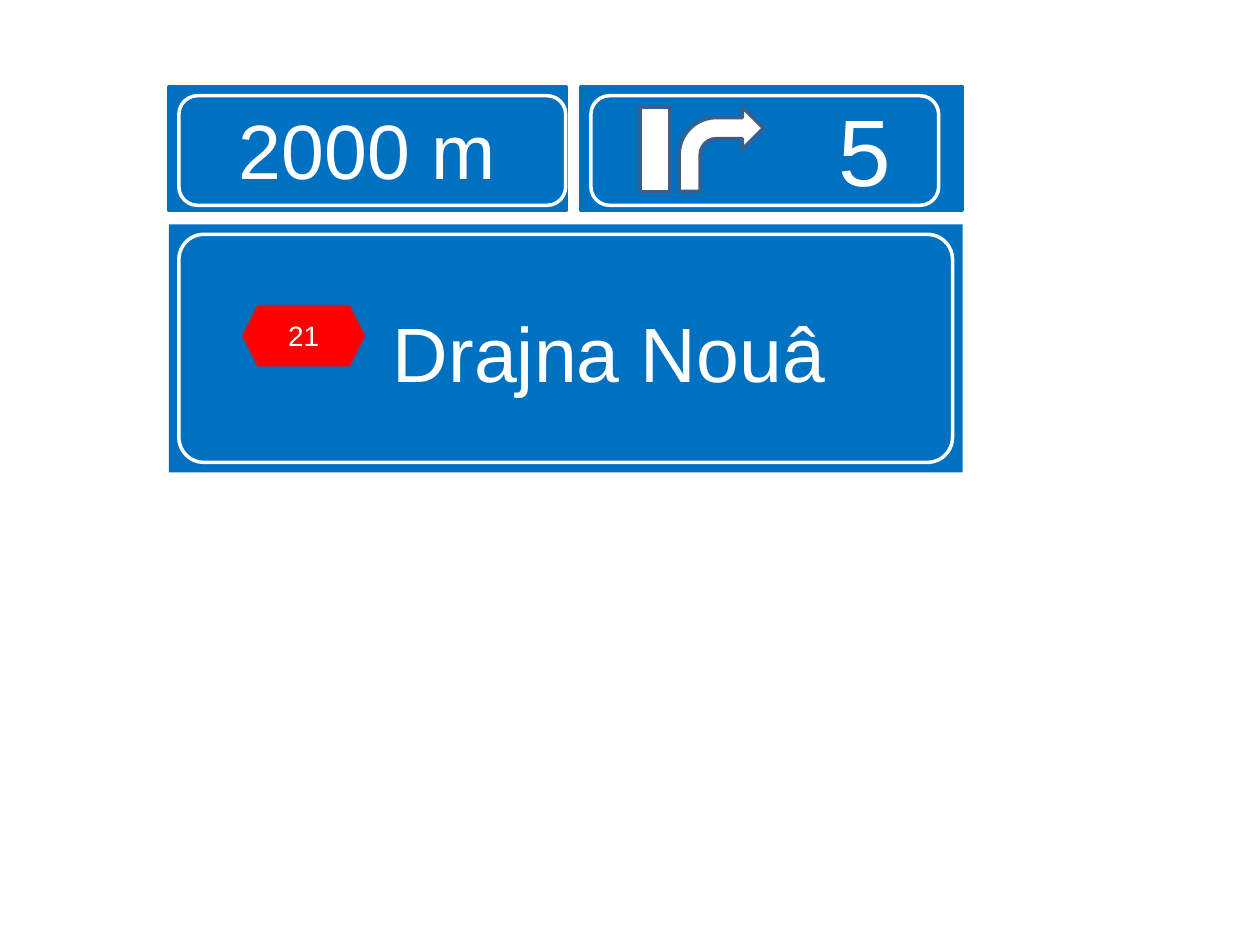
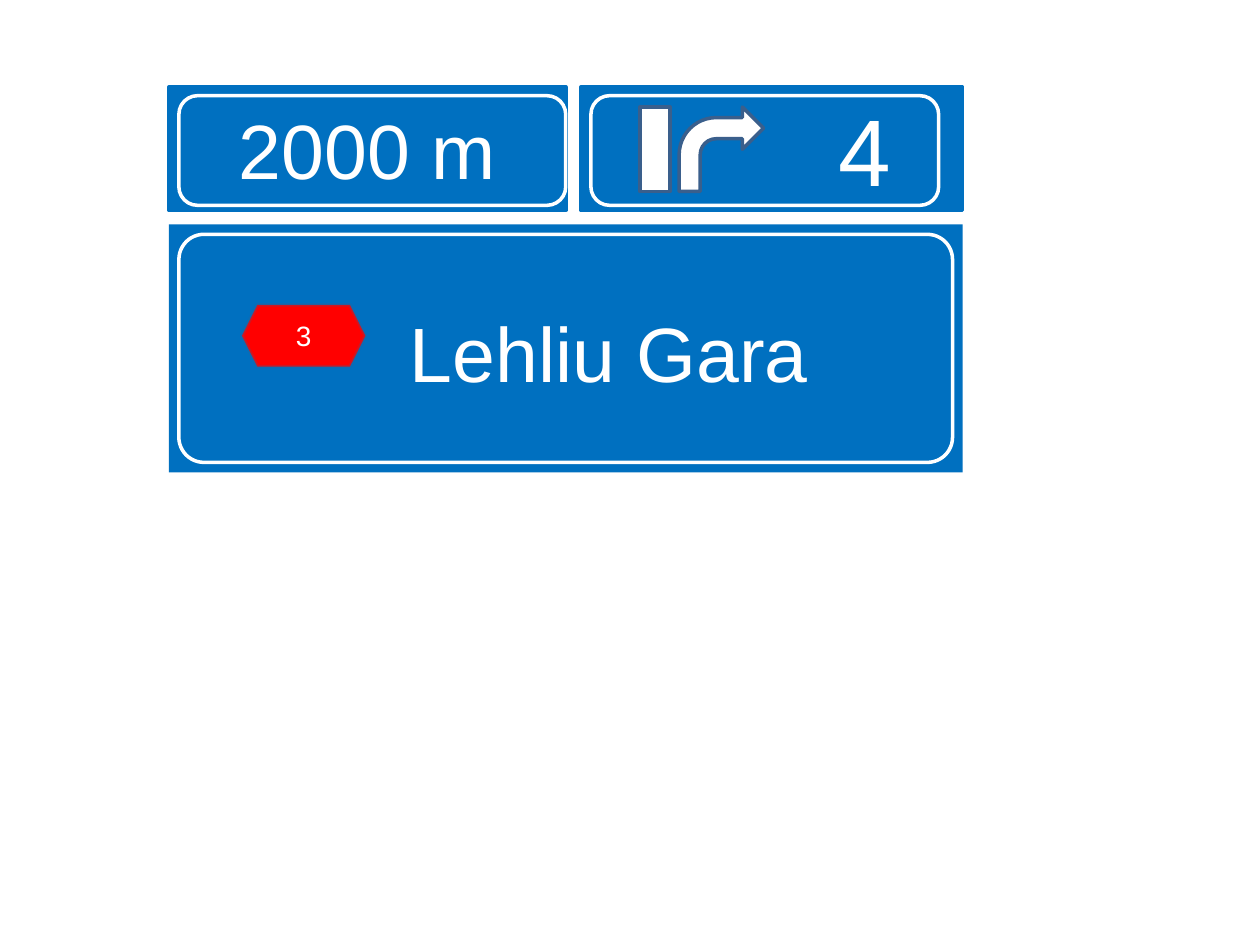
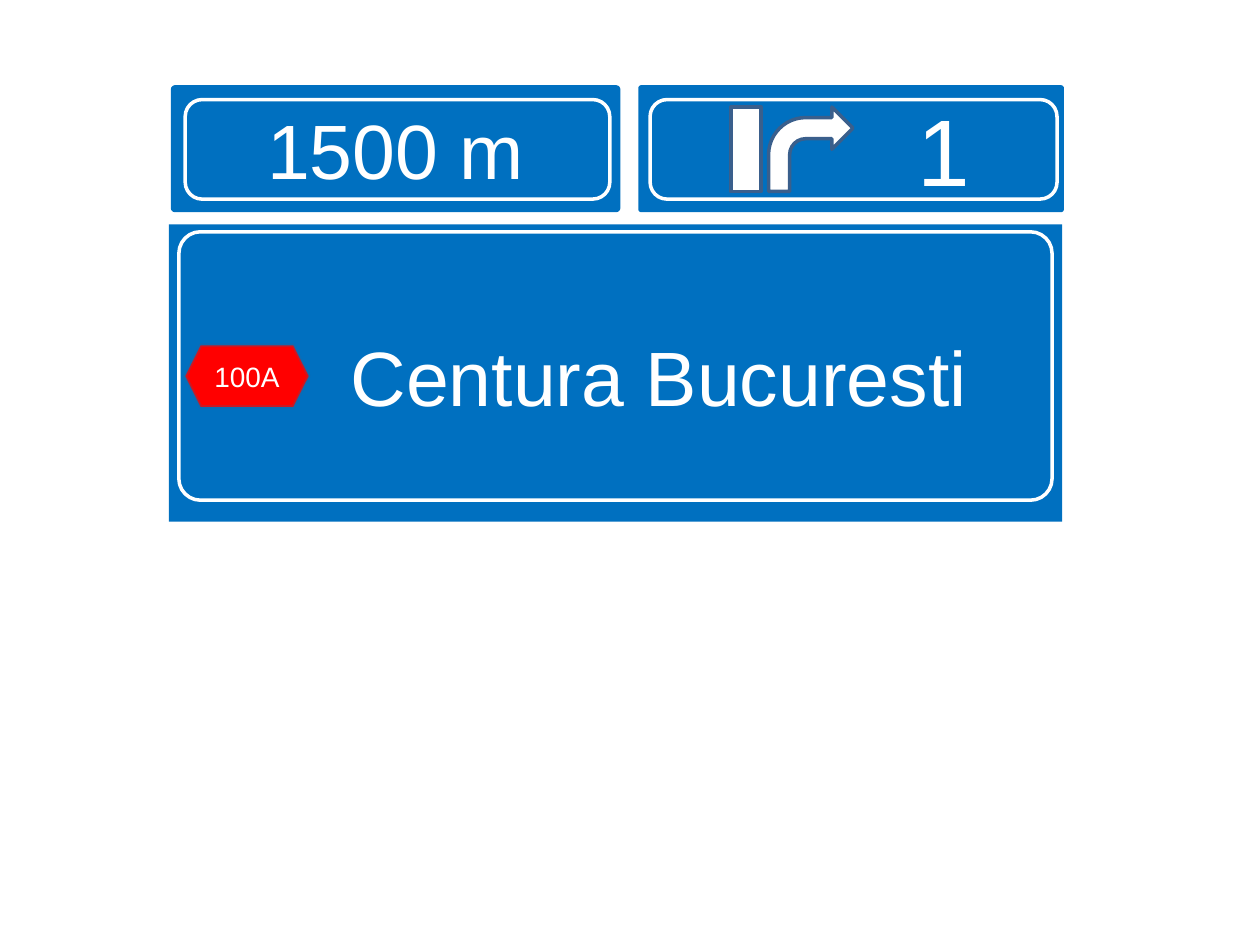
from dataclasses import dataclass

from lxml.etree import SubElement
from pptx import Presentation
from pptx.dml.color import RGBColor
from pptx.enum.shapes import MSO_SHAPE
from pptx.enum.text import MSO_ANCHOR, MSO_AUTO_SIZE, PP_ALIGN
from pptx.oxml.ns import qn
from pptx.util import Inches, Pt

WIDTH, HEIGHT = Inches(10), Inches(7.5)
COLUMNS, ROWS = 100, 75
TITLE_ONLY = 5

BLUE, WHITE, RED, EDGE = "0070C0", "FFFFFF", "FF0000", "3A5F8C"


def color(hex_string):
    return RGBColor.from_string(hex_string)


@dataclass
class Panel:
    """A blue plate and its white frame, as (column, row, columns, rows)."""
    plate: tuple
    frame: tuple
    plate_corner: float = 0
    frame_corner: float = 0.17


@dataclass
class Board:
    """Placement of the three panels, the lane symbol and the road badge."""
    distance: Panel
    exit: Panel
    destination: Panel
    lane: tuple
    badge: tuple


class SignDeck:
    font = "Arial"
    line_width = Pt(2)

    def __init__(self):
        self.deck = Presentation()
        self.deck.slide_width, self.deck.slide_height = WIDTH, HEIGHT
        self.page = None

    def new_page(self):
        self.page = self.deck.slides.add_slide(self.deck.slide_layouts[TITLE_ONLY])

    def place(self, area):
        column, row, columns, rows = area
        return (round(WIDTH * column / COLUMNS), round(HEIGHT * row / ROWS),
                round(WIDTH * columns / COLUMNS), round(HEIGHT * rows / ROWS))

    def shape(self, kind, area, fill=None, line=EDGE, adjustments=()):
        box = self.page.shapes.add_shape(kind, *self.place(area))
        box.shadow.inherit = False
        if fill:
            box.fill.solid()
            box.fill.fore_color.rgb = color(fill)
        else:
            box.fill.background()
        box.line.color.rgb = color(line)
        box.line.width = self.line_width
        for index, value in enumerate(adjustments):
            box.adjustments[index] = value
        return box

    def label(self, box, text, size, left=0.1, top=0.05, bottom=0.05):
        frame = box.text_frame
        frame.text = text
        frame.word_wrap = True
        frame.auto_size = MSO_AUTO_SIZE.NONE
        frame.vertical_anchor = MSO_ANCHOR.MIDDLE
        frame.margin_left, frame.margin_right = Inches(left), Inches(0.1)
        frame.margin_top, frame.margin_bottom = Inches(top), Inches(bottom)
        para = frame.paragraphs[0]
        para.alignment = PP_ALIGN.CENTER
        para.font.name, para.font.size = self.font, Pt(size)
        para.font.color.rgb = color(WHITE)

    def plate(self, panel, text, size, left=0.1):
        box = self.shape(MSO_SHAPE.ROUNDED_RECTANGLE, panel.plate, BLUE, BLUE,
                         [panel.plate_corner])
        self.label(box, text, size, left)

    def frame(self, panel):
        self.shape(MSO_SHAPE.ROUNDED_RECTANGLE, panel.frame, line=WHITE,
                   adjustments=[panel.frame_corner])

    def destination(self, panel, text):
        title = self.page.shapes.title
        title.left, title.top, title.width, title.height = self.place(panel.plate)
        title.fill.solid()
        title.fill.fore_color.rgb = color(BLUE)
        self.label(title, text, 44, left=0.79, bottom=0)

    def lane_symbol(self, bar_column, arrow_column):
        top, height = 8.5, 6.7
        self.shape(MSO_SHAPE.RECTANGLE, (bar_column, top, 2.4, height), WHITE)
        self.shape(MSO_SHAPE.BENT_ARROW, (arrow_column, top, height, height), WHITE,
                   adjustments=[0.25, 0.25, 0.25, 0.44])

    def road_badge(self, corner, text):
        badge = self.shape(MSO_SHAPE.HEXAGON, (*corner, 9.8, 4.9), RED)
        # The edge is mostly transparent over the red
        edge = badge.element.find(f".//{qn('a:ln')}//{qn('a:srgbClr')}")
        SubElement(edge, qn("a:alpha"), val="25000")
        self.label(badge, text, 16)

    def sign(self, board, distance, exit_number, road, destination):
        self.new_page()
        self.destination(board.destination, destination)
        self.plate(board.distance, distance, 44)
        self.plate(board.exit, exit_number, 54, left=1.57)
        self.lane_symbol(*board.lane)
        self.road_badge(board.badge, road)
        for panel in (board.destination, board.distance, board.exit):
            self.frame(panel)


# Boards: a compact one and a wide one
COMPACT = Board(
    distance=Panel((13.4, 6.9, 31.5, 9.8), (14.2, 7.6, 30.7, 8.7)),
    exit=Panel((46.1, 6.9, 30.3, 9.8), (46.9, 7.6, 27.6, 8.7)),
    destination=Panel((13.4, 17.8, 63, 19.7), (14.2, 18.6, 61.4, 18.1),
                      frame_corner=0.11),
    lane=(50.8, 53.9),
    badge=(19.2, 24.2),
)
WIDE = Board(
    distance=Panel((13.7, 6.9, 35.4, 9.8), (14.7, 7.9, 33.7, 7.9), 0.02),
    exit=Panel((50.8, 6.9, 33.5, 9.8), (51.6, 7.9, 32.3, 7.9), 0.01),
    destination=Panel((13.4, 17.8, 70.9, 23.6), (14.2, 18.4, 69.3, 21.3),
                      frame_corner=0.08),
    lane=(58, 61),
    badge=(14.7, 27.4),
)

# Signs: board, distance, exit, road, destination
SIGNS = [
    (COMPACT, "2000 m", "5", "21", "Drajna Nouâ"),
    (COMPACT, "2000 m", "4", "3", "Lehliu Gara"),
    (WIDE, "1500 m", "1", "100A", "Centura Bucuresti"),
]


def main():
    signs = SignDeck()
    for sign in SIGNS:
        signs.sign(*sign)
    signs.deck.save("out.pptx")


if __name__ == "__main__":
    main()
